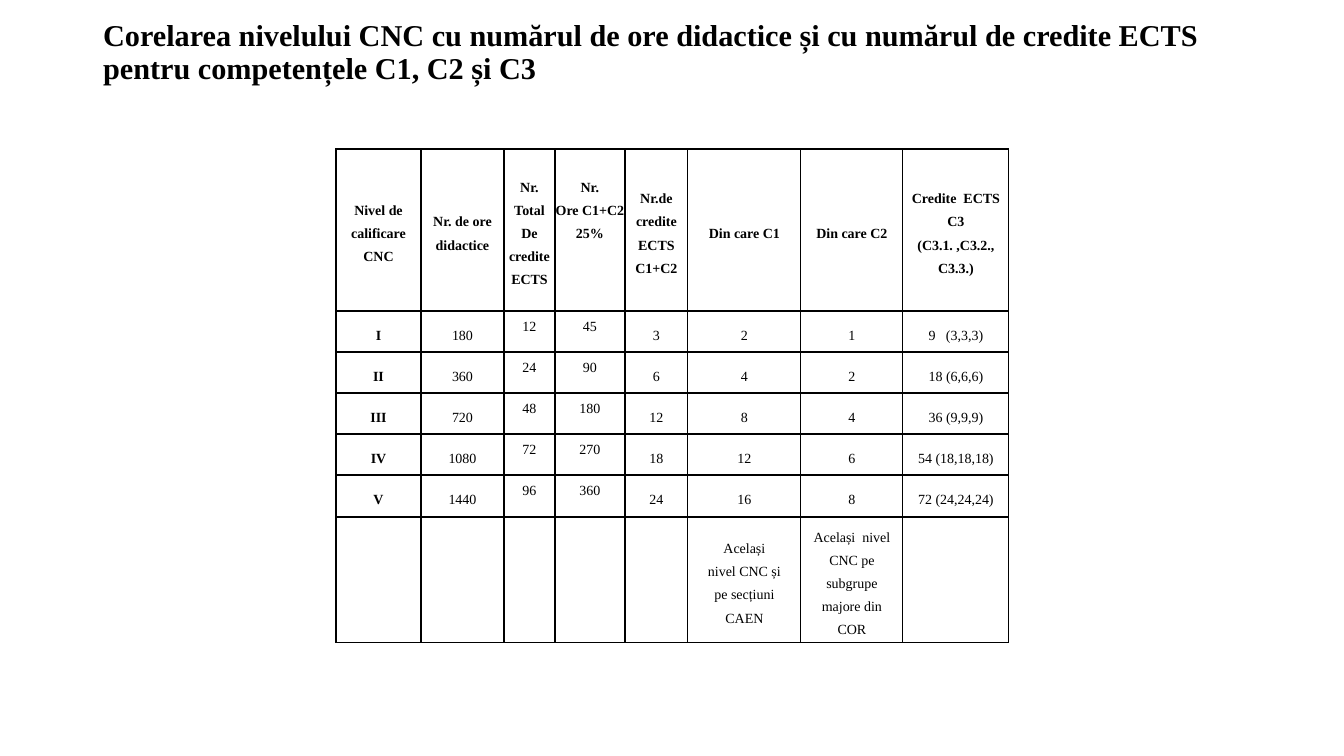
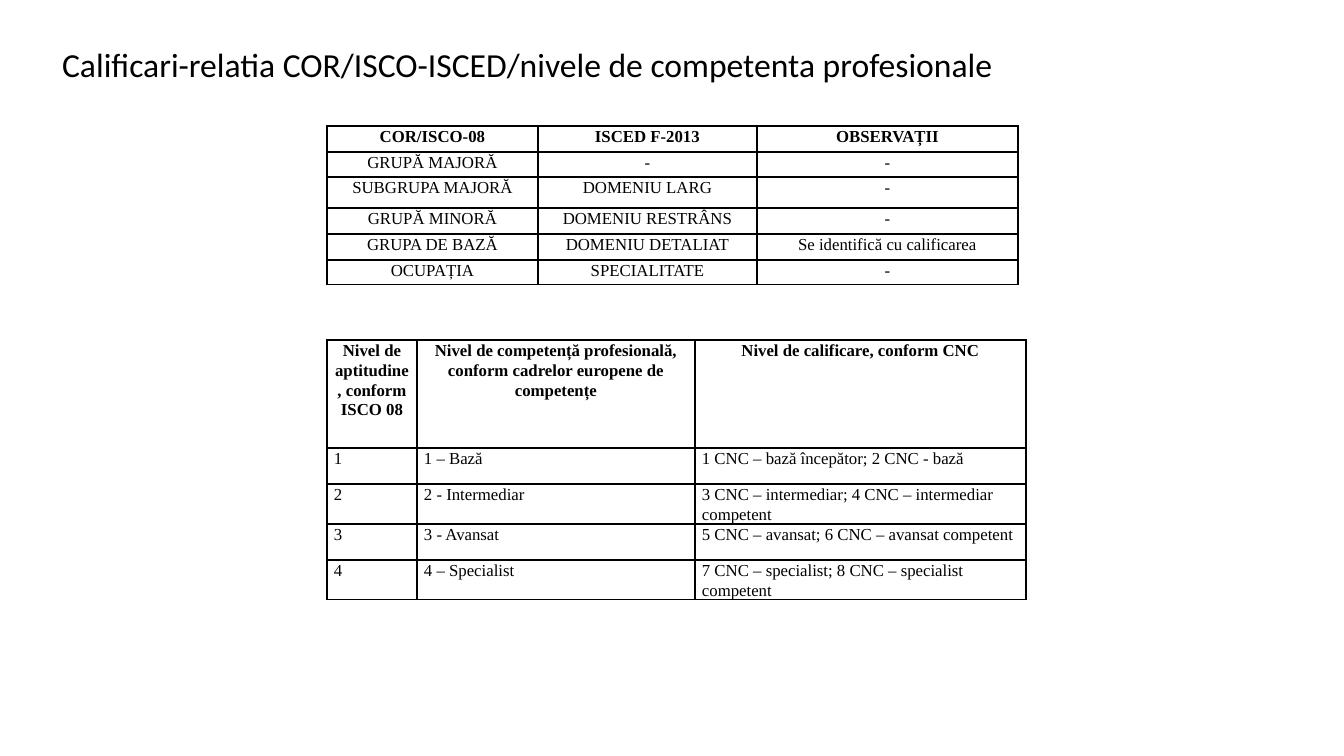
from lxml.etree import SubElement
from pptx import Presentation
from pptx.dml.color import RGBColor
from pptx.enum.text import MSO_ANCHOR, MSO_AUTO_SIZE, PP_ALIGN
from pptx.oxml.ns import qn
from pptx.util import Pt

PAGE_WIDTH, PAGE_HEIGHT = 1344, 756
EMU_PER_PX = 12192000 / PAGE_WIDTH
COLORS = {"text": "000000", "border": "000000"}
SERIF, SANS = "Times New Roman", "Calibri"
TITLE_ONLY = 5

CREDIT_COLUMNS = [85, 83, 51, 70, 63, 113, 102, 106]
CREDIT_ROWS = [162, 41, 41, 41, 41, 42, 125]
CREDITS = [
    ["Nivel de calificare\nCNC", "Nr. de ore didactice", "Nr.\nTotal\nDe credite\nECTS",
     "Nr.\nOre C1+C2\n25%", "Nr.de credite\nECTS\nC1+C2", "Din care C1", "Din care C2",
     "Credite  ECTS C3 (C3.1. ,C3.2., C3.3.)"],
    ["I", "180", "12", "45", "3", "2", "1", "9   (3,3,3)"],
    ["II", "360", "24", "90", "6", "4", "2", "18 (6,6,6)"],
    ["III", "720", "48", "180", "12", "8", "4", "36 (9,9,9)"],
    ["IV", "1080", "72", "270", "18", "12", "6", "54 (18,18,18)"],
    ["V", "1440", "96", "360", "24", "16", "8", "72 (24,24,24)"],
    ["", "", "", "", "", "Același\nnivel CNC și\npe secțiuni CAEN",
     "Același  nivel CNC pe subgrupe majore din COR", ""],
]

GROUP_COLUMNS = [211, 219, 261]
GROUP_ROWS = [26, 25, 31, 26, 26, 25]
GROUPS = [
    ["COR/ISCO-08", "ISCED F-2013", "OBSERVAȚII"],
    ["GRUPĂ MAJORĂ", "-", "-"],
    ["SUBGRUPA MAJORĂ", "DOMENIU LARG", "-"],
    ["GRUPĂ MINORĂ", "DOMENIU RESTRÂNS", "-"],
    ["GRUPA DE BAZĂ", "DOMENIU DETALIAT", "Se identifică cu calificarea"],
    ["OCUPAȚIA", "SPECIALITATE", "-"],
]

LEVEL_COLUMNS = [90, 278, 331]
LEVEL_ROWS = [108, 36, 40, 36, 40]
LEVELS = [
    ["Nivel de aptitudine, conform ISCO 08",
     "Nivel de competență profesională, conform cadrelor europene de competențe",
     "Nivel de calificare, conform CNC"],
    ["1", "1 – Bază", "1 CNC – bază începător; 2 CNC - bază"],
    ["2", "2 - Intermediar", "3 CNC – intermediar; 4 CNC – intermediar competent"],
    ["3", "3 - Avansat", "5 CNC – avansat; 6 CNC – avansat competent"],
    ["4", "4 – Specialist", "7 CNC – specialist; 8 CNC – specialist competent"],
]


def px(length):
    return round(length * EMU_PER_PX)


def write_text(frame, text, size=12, font=SERIF, bold=False,
               align=PP_ALIGN.CENTER, spacing=1.0):
    """Put each line of the text in a paragraph of its own."""
    frame.word_wrap = True
    for index, line in enumerate(text.split("\n")):
        para = frame.add_paragraph() if index else frame.paragraphs[0]
        para.alignment, para.line_spacing = align, spacing
        para.font.size = Pt(size)
        if not line:
            continue
        span = para.add_run()
        span.text = line
        span.font.size, span.font.name, span.font.bold = Pt(size), font, bold
        span.font.color.rgb = RGBColor.from_string(COLORS["text"])


def add_titled_page(deck, text, box, **text_format):
    page = deck.slides.add_slide(deck.slide_layouts[TITLE_ONLY])
    title = page.shapes.title
    title.left, title.top, title.width, title.height = map(px, box)
    frame = title.text_frame
    frame.auto_size = MSO_AUTO_SIZE.NONE
    frame.vertical_anchor = MSO_ANCHOR.MIDDLE
    write_text(frame, text, align=PP_ALIGN.LEFT, spacing=0.9, **text_format)
    return page


def set_borders(cell):
    properties = cell._tc.get_or_add_tcPr()
    for index, side in enumerate(("lnL", "lnR", "lnT", "lnB")):
        line = properties.makeelement(qn(f"a:{side}"), {"w": str(Pt(1))})
        properties.insert(index, line)
        fill = SubElement(line, qn("a:solidFill"))
        SubElement(fill, qn("a:srgbClr"), val=COLORS["border"])


def set_insets(cell, left, top, right, bottom):
    cell.margin_left, cell.margin_top = px(left), px(top)
    cell.margin_right, cell.margin_bottom = px(right), px(bottom)


def add_grid(page, origin, columns, rows, texts, style_cell):
    """Draw a bordered table; style_cell returns the text format of a cell."""
    left, top = origin
    table = page.shapes.add_table(len(rows), len(columns), px(left), px(top),
                                  px(sum(columns)), px(sum(rows))).table
    table.first_row = table.horz_banding = False
    for column, width in zip(table.columns, columns):
        column.width = px(width)
    for row_index, (row, height) in enumerate(zip(table.rows, rows)):
        row.height = px(height)
        for column_index, cell in enumerate(row.cells):
            cell.fill.background()
            set_borders(cell)
            text_format = style_cell(cell, row_index, column_index)
            write_text(cell.text_frame, texts[row_index][column_index], **text_format)


def style_credit(cell, row, column):
    if column in (2, 3):
        # These headings start one line below the top of the row
        set_insets(cell, 0, 0 if row else 23, 0, 0)
    else:
        set_insets(cell, 9, 5, 9, 5)
        cell.vertical_anchor = MSO_ANCHOR.MIDDLE
    return {"size": 10, "spacing": 1.5, "bold": row == 0 or column == 0}


def style_group(cell, row, column):
    set_insets(cell, 7, 0, 7, 0)
    return {"spacing": 1.07, "bold": row == 0}


def style_level(cell, row, column):
    align = PP_ALIGN.LEFT if row else PP_ALIGN.CENTER
    return {**style_group(cell, row, column), "align": align}


def build_credits_page(deck):
    page = add_titled_page(
        deck,
        "Corelarea nivelului CNC cu numărul de ore didactice și cu numărul de credite ECTS "
        "pentru competențele C1, C2 și C3",
        (93, 15, 1159, 76), size=21.6, bold=True)
    add_grid(page, (336, 149), CREDIT_COLUMNS, CREDIT_ROWS, CREDITS, style_credit)


def build_levels_page(deck):
    page = add_titled_page(
        deck, "Calificari-relatia COR/ISCO-ISCED/nivele de competenta profesionale",
        (52, 40, 1285, 53), size=24, font=SANS)
    add_grid(page, (327, 126), GROUP_COLUMNS, GROUP_ROWS, GROUPS, style_group)
    add_grid(page, (327, 340), LEVEL_COLUMNS, LEVEL_ROWS, LEVELS, style_level)


def main():
    deck = Presentation()
    deck.slide_width, deck.slide_height = px(PAGE_WIDTH), px(PAGE_HEIGHT)
    build_credits_page(deck)
    build_levels_page(deck)
    deck.save("out.pptx")


if __name__ == "__main__":
    main()
